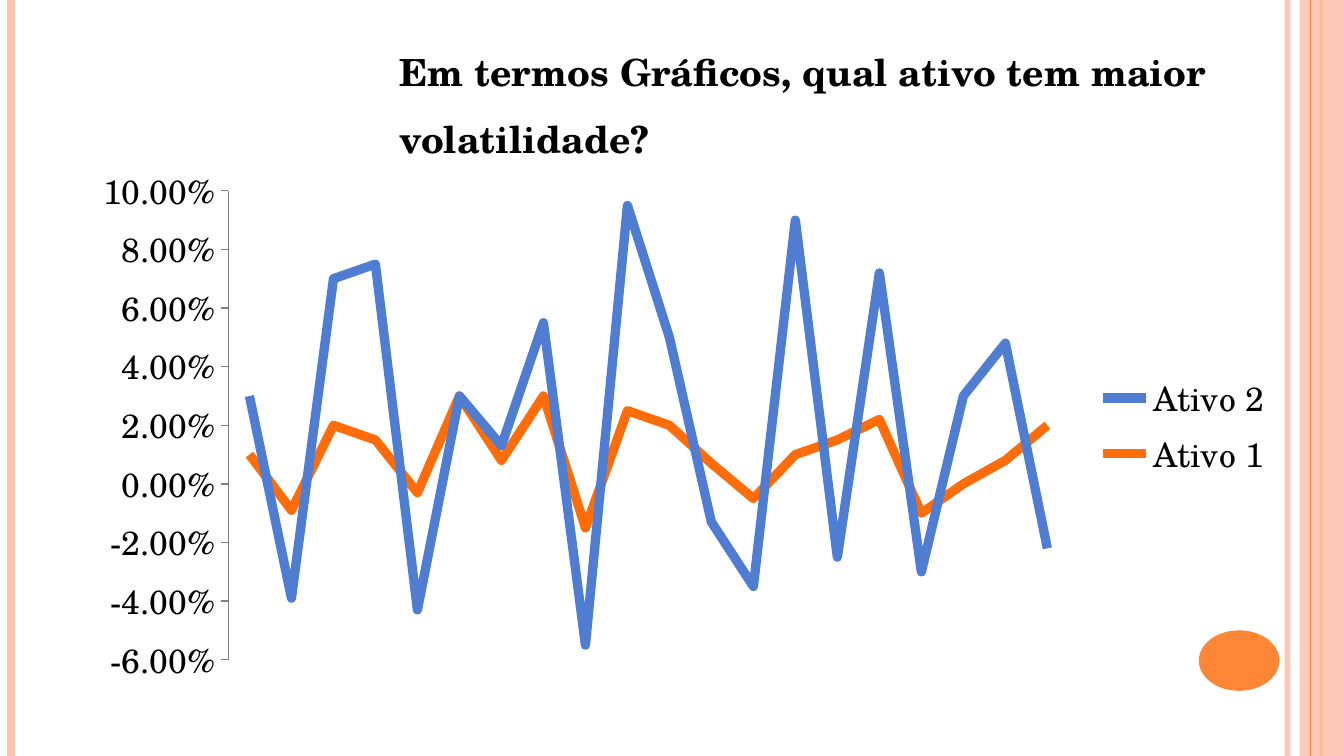
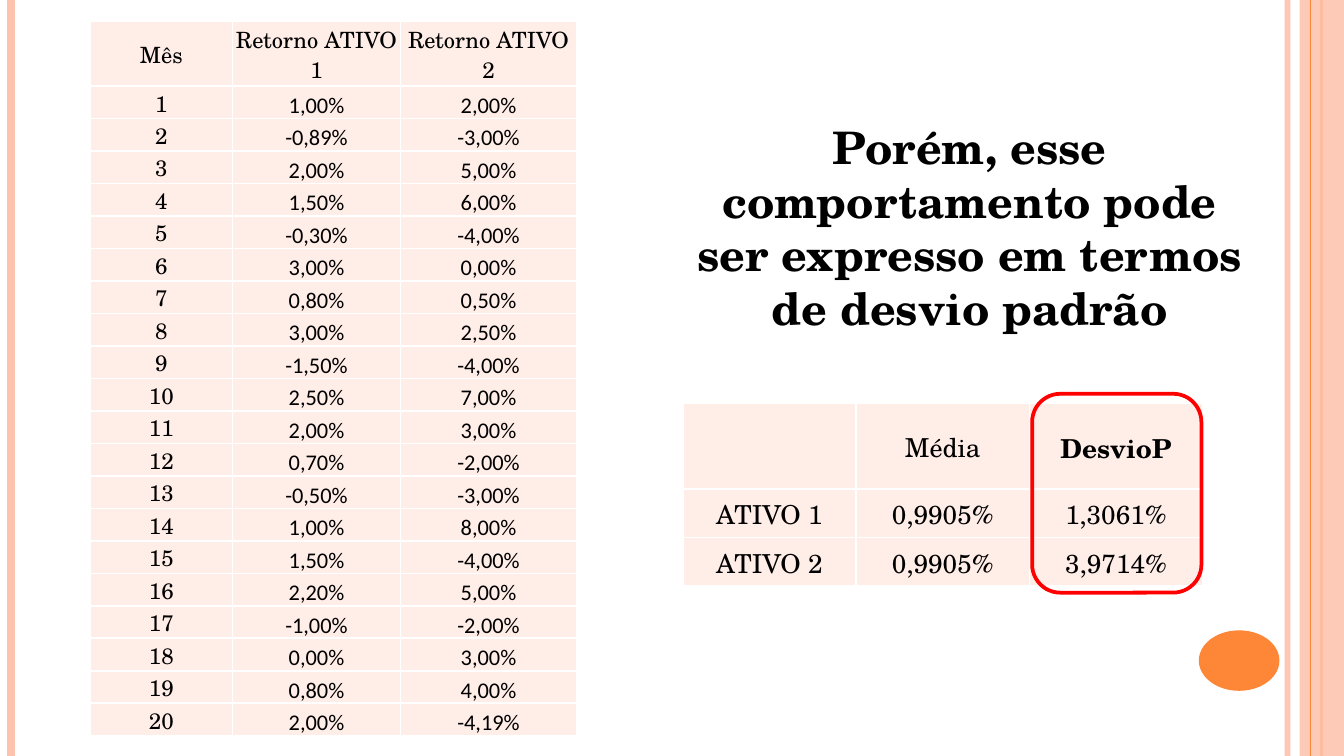
from lxml import etree
from pptx import Presentation
from pptx.chart.data import CategoryChartData
from pptx.dml.color import RGBColor
from pptx.enum.chart import (
    XL_CHART_TYPE, XL_LEGEND_POSITION, XL_MARKER_STYLE, XL_TICK_MARK)
from pptx.enum.shapes import MSO_CONNECTOR, MSO_SHAPE
from pptx.enum.text import MSO_ANCHOR, MSO_AUTO_SIZE, PP_ALIGN
from pptx.oxml import parse_xml
from pptx.oxml.ns import nsdecls, qn
from pptx.util import Inches, Pt

LEFT, CENTER = PP_ALIGN.LEFT, PP_ALIGN.CENTER
TOP, MIDDLE, BOTTOM = MSO_ANCHOR.TOP, MSO_ANCHOR.MIDDLE, MSO_ANCHOR.BOTTOM
RECTANGLE, OVAL = MSO_SHAPE.RECTANGLE, MSO_SHAPE.OVAL
ROUNDED_RECTANGLE = MSO_SHAPE.ROUNDED_RECTANGLE

WIDTH = 10
HEIGHT = WIDTH * 9 / 16
SERIF, SANS = "TeX Gyre Schola", "Calibri"
BLACK, WHITE, RED, GREY = "000000", "FFFFFF", "FF0000", "808080"
ORANGE, PEACH, PALE = "FE8637", "FEC3AE", "FFEDE8"
SERIES_COLORS = ("FF6D0A", "4F7DD1")

CHART_TITLE = "Em termos Gráficos, qual ativo tem maior volatilidade?"
DEVIATION_TITLE = "Porém, esse comportamento pode ser expresso em termos de desvio padrão"

CHART_BOX = (0.59, 1.16, 8.98, 4.02)
PLOT_BOX = (1.7, 1.42, 6.25, 3.49)

RETURNS_HEADER = ("Mês", "Retorno ATIVO 1", "Retorno ATIVO 2")
RETURNS = [  # percent per month: asset 1, asset 2
    (1, 2), (-0.89, -3), (2, 5), (1.5, 6), (-0.3, -4),
    (3, 0), (0.8, 0.5), (3, 2.5), (-1.5, -4), (2.5, 7),
    (2, 3), (0.7, -2), (-0.5, -3), (1, 8), (1.5, -4),
    (2.2, 5), (-1, -2), (0, 3), (0.8, 4), (2, -4.19),
]
SUMMARY = [
    ("", "Média", "DesvioP"),
    ("ATIVO 1", "0,9905%", "1,3061%"),
    ("ATIVO 2", "0,9905%", "3,9714%"),
]

# Vertical rules of the frame: x, colour, width in points, opacity in percent
RULES = [(9.58, PEACH, 3, 93), (0.08, PEACH, 4.5, 100), (9.83, ORANGE, 1.5, 100)]
INNER_RULE = (9.75, ORANGE, 0.75, 100)


def rgb(color):
    return RGBColor.from_string(color)


def inches(*lengths):
    return [Inches(length) for length in lengths]


def style_font(font, size, name=SERIF, bold=False):
    font.size, font.name, font.bold = Pt(size), name, bold
    font.color.rgb = rgb(BLACK)


def set_opacity(element, percent):
    color = next(element.iter(qn("a:srgbClr")))
    etree.SubElement(color, qn("a:alpha"), val=str(percent * 1000))


def add_rule(slide, x, color, width, opacity):
    rule = slide.shapes.add_connector(MSO_CONNECTOR.STRAIGHT, *inches(x, 0, x, HEIGHT))
    rule.line.color.rgb = rgb(color)
    rule.line.width = Pt(width)
    properties = rule._element.spPr
    if opacity < 100:
        set_opacity(properties, opacity)
    etree.SubElement(properties, qn("a:effectLst"))


def add_filled(slide, kind, box, color):
    shape = slide.shapes.add_shape(kind, *inches(*box))
    shape.shadow.inherit = False
    shape.fill.solid()
    shape.fill.fore_color.rgb = rgb(color)
    shape.line.fill.background()
    return shape


def add_framed_slide(presentation, title, box, size, alignment, spacing):
    """Add a slide with the side bands, the orange disc and its title."""
    slide = presentation.slides.add_slide(presentation.slide_layouts[5])
    for rule in RULES:
        add_rule(slide, *rule)
    band = add_filled(slide, RECTANGLE, (9.67, 0, WIDTH - 9.67, HEIGHT), PEACH)
    set_opacity(band._element.spPr, 87)
    add_rule(slide, *INNER_RULE)
    add_filled(slide, OVAL, (8.92, 4.69, 0.6, 0.45), ORANGE)

    heading = slide.shapes.title
    heading.left, heading.top, heading.width, heading.height = inches(*box)
    frame = heading.text_frame
    frame.text = title
    frame.word_wrap = True
    frame.auto_size = MSO_AUTO_SIZE.NONE
    frame.vertical_anchor = TOP
    frame.margin_right = Inches(0.08)
    paragraph = frame.paragraphs[0]
    paragraph.alignment, paragraph.line_spacing = alignment, spacing
    style_font(paragraph.font, size, bold=True)
    return slide


def set_plot_area(chart):
    """Fix the inner plot area, stored as shares of the chart."""
    left, top, width, height = CHART_BOX
    x, y, w, h = PLOT_BOX
    shares = {"x": (x - left) / width, "y": (y - top) / height,
              "w": w / width, "h": h / height}
    sizes = "".join(f'<c:{key} val="{share:.4f}"/>' for key, share in shares.items())
    layout = parse_xml(
        f'<c:layout {nsdecls("c")}><c:manualLayout><c:layoutTarget val="inner"/>'
        f'<c:xMode val="edge"/><c:yMode val="edge"/>{sizes}</c:manualLayout></c:layout>')
    plot_area = chart._chartSpace.chart.plotArea
    for automatic in plot_area.findall(qn("c:layout")):
        plot_area.remove(automatic)
    plot_area.insert(0, layout)


def add_returns_chart(slide):
    data = CategoryChartData(number_format="0.00%")
    data.categories = [str(month + 1) for month in range(len(RETURNS))]
    for number, values in enumerate(zip(*RETURNS), 1):
        data.add_series(f"Ativo {number}", [round(value / 100, 3) for value in values])
    chart = slide.shapes.add_chart(
        XL_CHART_TYPE.LINE_STACKED, *inches(*CHART_BOX), data).chart
    chart.has_title = False
    style_font(chart.font, 18)
    chart.has_legend = True
    chart.legend.position = XL_LEGEND_POSITION.RIGHT
    chart.legend.include_in_layout = False
    chart.category_axis.visible = False

    axis = chart.value_axis
    axis.minimum_scale, axis.maximum_scale, axis.major_unit = -0.06, 0.1, 0.02
    axis.has_major_gridlines = False
    axis.major_tick_mark = XL_TICK_MARK.OUTSIDE
    axis.tick_labels.number_format = "0.00%"
    axis.tick_labels.number_format_is_linked = False
    axis.format.line.color.rgb = rgb(GREY)

    plot = chart.plots[0]
    plot.vary_by_categories = False
    for series, color in zip(plot.series, SERIES_COLORS):
        series.smooth = False
        series.marker.style = XL_MARKER_STYLE.NONE
        series.format.line.color.rgb = rgb(color)
        series.format.line.width = Pt(5)
    set_plot_area(chart)


def style_cell(cell, text, size, name, anchor, bold):
    cell.text = text
    cell.vertical_anchor = anchor
    cell.margin_left = cell.margin_right = cell.margin_top = Inches(0.01)
    cell.margin_bottom = 0
    paragraph = cell.text_frame.paragraphs[0]
    paragraph.alignment = CENTER
    paragraph.line_spacing = 0.92
    style_font(paragraph.font, size, name, bold)
    cell.fill.solid()
    cell.fill.fore_color.rgb = rgb(PALE)
    properties = cell._tc.get_or_add_tcPr()
    for position, side in enumerate("LRTB"):
        properties.insert(position, parse_xml(
            f'<a:ln{side} {nsdecls("a")} w="{Pt(1)}"><a:solidFill>'
            f'<a:srgbClr val="{WHITE}"/></a:solidFill></a:ln{side}>'))


def add_grid(slide, left, top, widths, heights, rows, size, cell_style):
    """Add a table; cell_style(row, column) gives font name, anchor and bold."""
    table = slide.shapes.add_table(
        len(rows), len(widths), *inches(left, top, sum(widths), sum(heights))).table
    table.first_row = table.horz_banding = False
    for column, width in zip(table.columns, widths):
        column.width = Inches(width)
    for r, (row, height) in enumerate(zip(rows, heights)):
        table.rows[r].height = Inches(height)
        for c, text in enumerate(row):
            style_cell(table.cell(r, c), text, size, *cell_style(r, c))


def percent(value):
    return f"{value:.2f}%".replace(".", ",")


def returns_style(row, column):
    return (SANS, BOTTOM, False) if row and column else (SERIF, MIDDLE, False)


def summary_style(row, column):
    return SERIF, MIDDLE, (row, column) == (0, 2)


def main():
    presentation = Presentation()
    presentation.slide_width, presentation.slide_height = inches(WIDTH, HEIGHT)

    slide = add_framed_slide(
        presentation, CHART_TITLE, (2.87, 0.15, 6.3, 1.11), 20, LEFT, 1.5)
    add_returns_chart(slide)

    slide = add_framed_slide(
        presentation, DEVIATION_TITLE, (5.08, 0.84, 4.25, 1.72), 24, CENTER, 1)
    months = [(str(month), *map(percent, pair)) for month, pair in enumerate(RETURNS, 1)]
    month_height = (5.32 - 0.48) / len(months)
    add_grid(slide, 0.67, 0.16, (1.06, 1.25, 1.31), [0.48] + [month_height] * len(months),
             [RETURNS_HEADER] + months, 12, returns_style)
    add_grid(slide, 5.08, 3, [1.29] * 3, (0.64, 0.36, 0.36),
             SUMMARY, 14, summary_style)

    highlight = slide.shapes.add_shape(ROUNDED_RECTANGLE, *inches(7.68, 2.93, 1.26, 1.48))
    highlight.shadow.inherit = False
    highlight.fill.background()
    highlight.line.color.rgb = rgb(RED)
    highlight.line.width = Pt(2)

    presentation.save("out.pptx")


if __name__ == "__main__":
    main()
